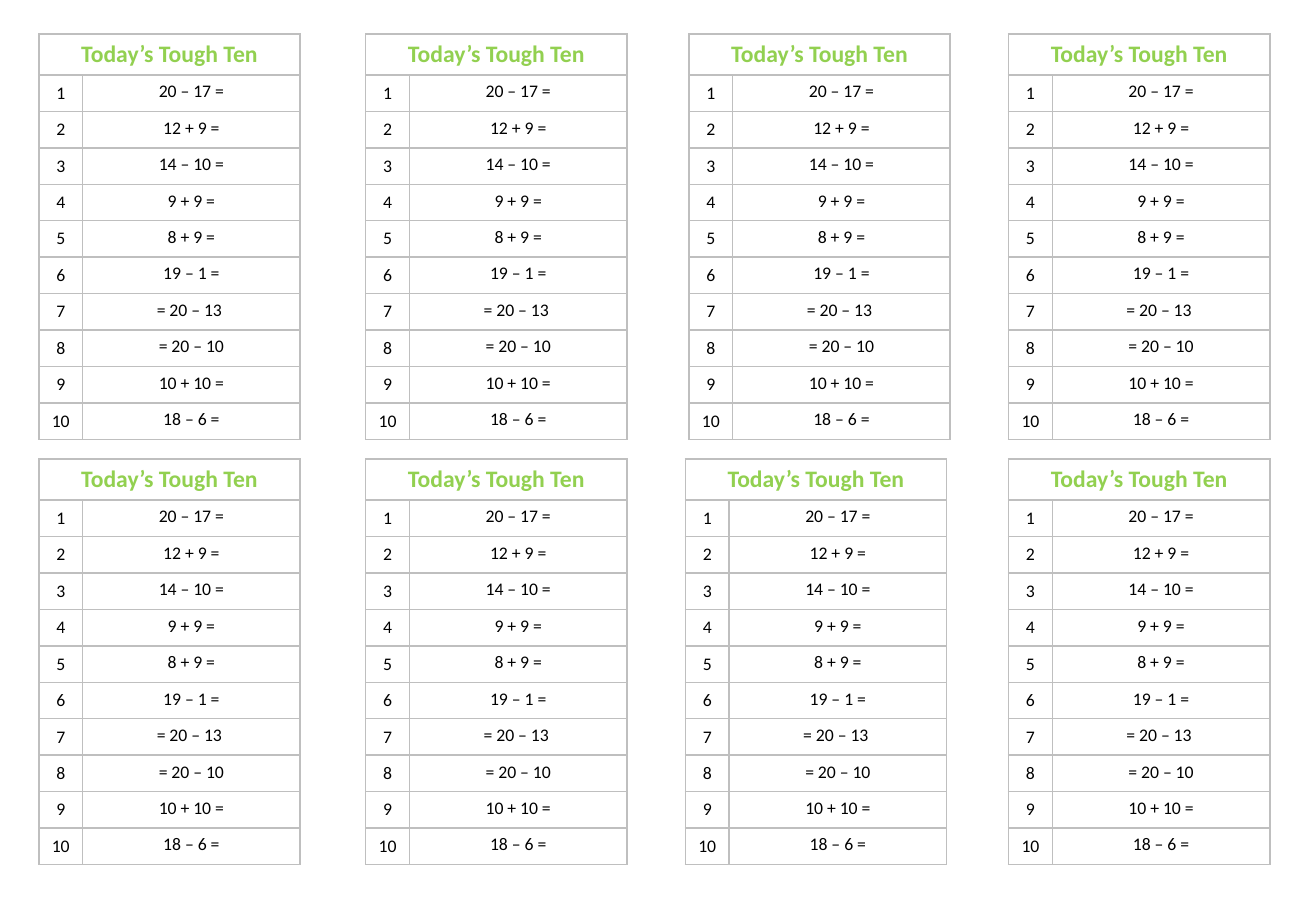
from dataclasses import dataclass

from lxml.etree import SubElement
from pptx import Presentation
from pptx.dml.color import RGBColor
from pptx.enum.text import MSO_ANCHOR as Anchor, PP_ALIGN as Align
from pptx.oxml.ns import qn
from pptx.util import Inches, Pt

TITLE = "Today’s Tough Ten"
QUESTIONS = (
    "20 – 17 =", "12 + 9 =", "14 – 10 =", "9 + 9 =", "8 + 9 =",
    "19 – 1 =", "= 20 – 13 ", "= 20 – 10", "10 + 10 =", "18 – 6 =",
)
BORDER_COLOUR = "BFBFBF"
TITLE_COLOUR = "92D050"
TEXT_COLOUR = "000000"
COLUMN_WIDTHS = (0.36, 1.79)
TITLE_HEIGHT = 0.33
QUESTION_HEIGHT = 0.3
TITLE_FORMAT = {"name": "Calibri", "size": Pt(14), "bold": True}
TEXT_FORMAT = {"name": "Calibri", "size": Pt(10.5), "bold": False}


@dataclass(frozen=True)
class CardRow:
    top: float
    lefts: tuple[float, ...]


CARD_ROWS = (
    CardRow(0.28, (0.32, 3.01, 5.67, 8.3)),
    CardRow(3.78, (0.32, 3.01, 5.64, 8.3)),
)


def colour(value: str) -> RGBColor:
    return RGBColor.from_string(value)


def style_cell(cell) -> None:
    """Give the cell thin grey borders and no fill."""
    properties = cell._tc.get_or_add_tcPr()
    for side in ("a:lnL", "a:lnR", "a:lnT", "a:lnB"):
        line = SubElement(properties, qn(side), w=str(Pt(1)))
        fill = SubElement(line, qn("a:solidFill"))
        SubElement(fill, qn("a:srgbClr"), val=BORDER_COLOUR)
    cell.fill.background()


def write_cell(cell, text: str, text_format: dict, text_colour: str,
               anchor: Anchor = Anchor.TOP) -> None:
    cell.vertical_anchor = anchor
    paragraph = cell.text_frame.paragraphs[0]
    paragraph.alignment = Align.CENTER
    run = paragraph.add_run()
    run.text = text
    for name, value in text_format.items():
        setattr(run.font, name, value)
    run.font.color.rgb = colour(text_colour)


def add_card(slide, left: float, top: float) -> None:
    """Draw one card: a title over ten numbered questions."""
    height = TITLE_HEIGHT + QUESTION_HEIGHT * len(QUESTIONS)
    table = slide.shapes.add_table(
        len(QUESTIONS) + 1, len(COLUMN_WIDTHS), Inches(left), Inches(top),
        Inches(sum(COLUMN_WIDTHS)), Inches(height)).table
    table.first_row = table.horz_banding = False

    # Grid
    for column, width in zip(table.columns, COLUMN_WIDTHS):
        column.width = Inches(width)
    for index, row in enumerate(table.rows):
        row.height = Inches(QUESTION_HEIGHT if index else TITLE_HEIGHT)
    for cell in table.iter_cells():
        style_cell(cell)

    # Title
    table.cell(0, 0).merge(table.cell(0, 1))
    write_cell(table.cell(0, 0), TITLE, TITLE_FORMAT, TITLE_COLOUR)

    # Numbered questions
    for number, question in enumerate(QUESTIONS, start=1):
        write_cell(table.cell(number, 0), str(number), TEXT_FORMAT,
                   TEXT_COLOUR, Anchor.MIDDLE)
        write_cell(table.cell(number, 1), question, TEXT_FORMAT, TEXT_COLOUR)


def main() -> None:
    presentation = Presentation()
    presentation.slide_width = Inches(10.83)
    presentation.slide_height = Inches(7.5)
    slide = presentation.slides.add_slide(presentation.slide_layouts[6])
    for card_row in CARD_ROWS:
        for left in card_row.lefts:
            add_card(slide, left, card_row.top)
    presentation.save("out.pptx")


if __name__ == "__main__":
    main()
